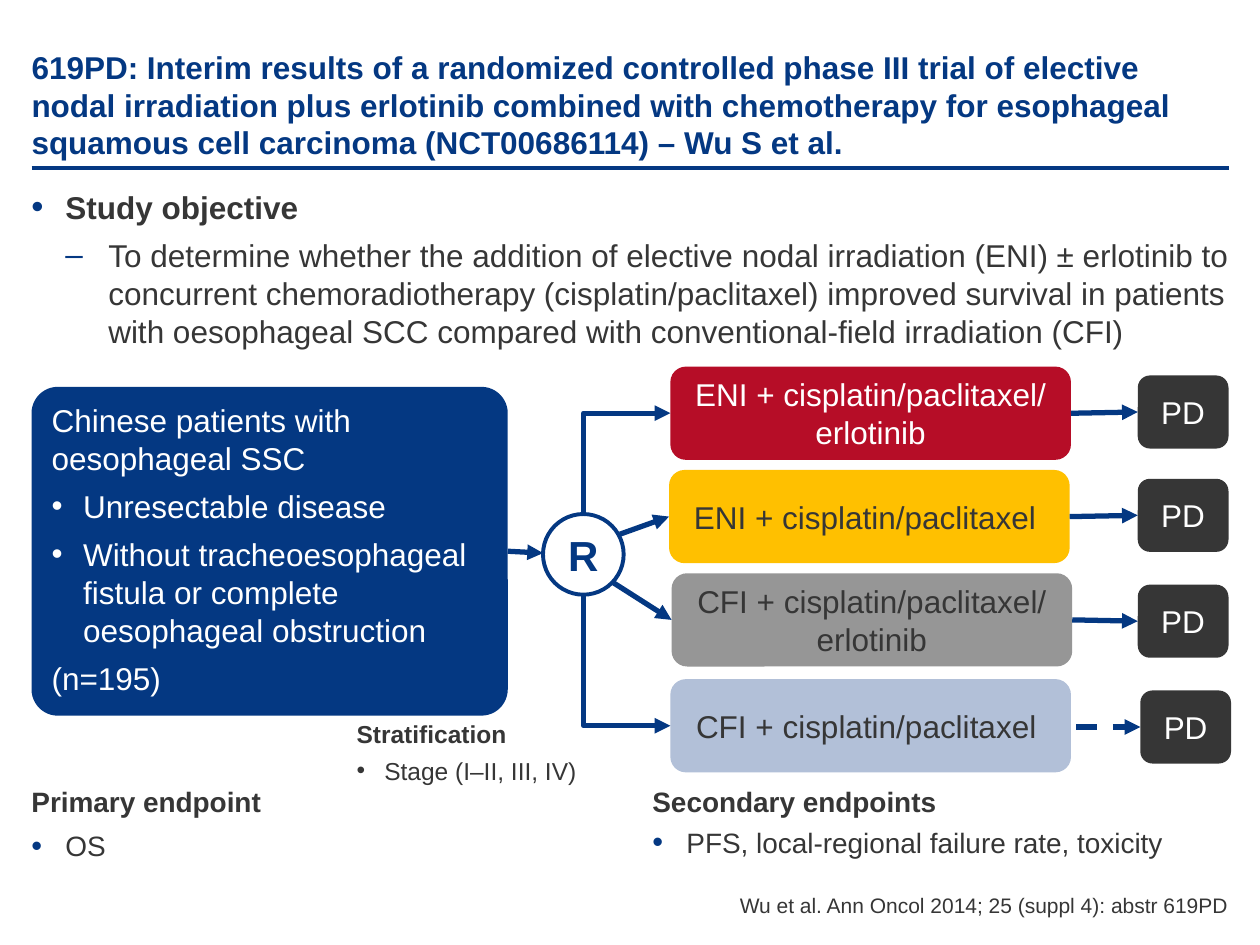
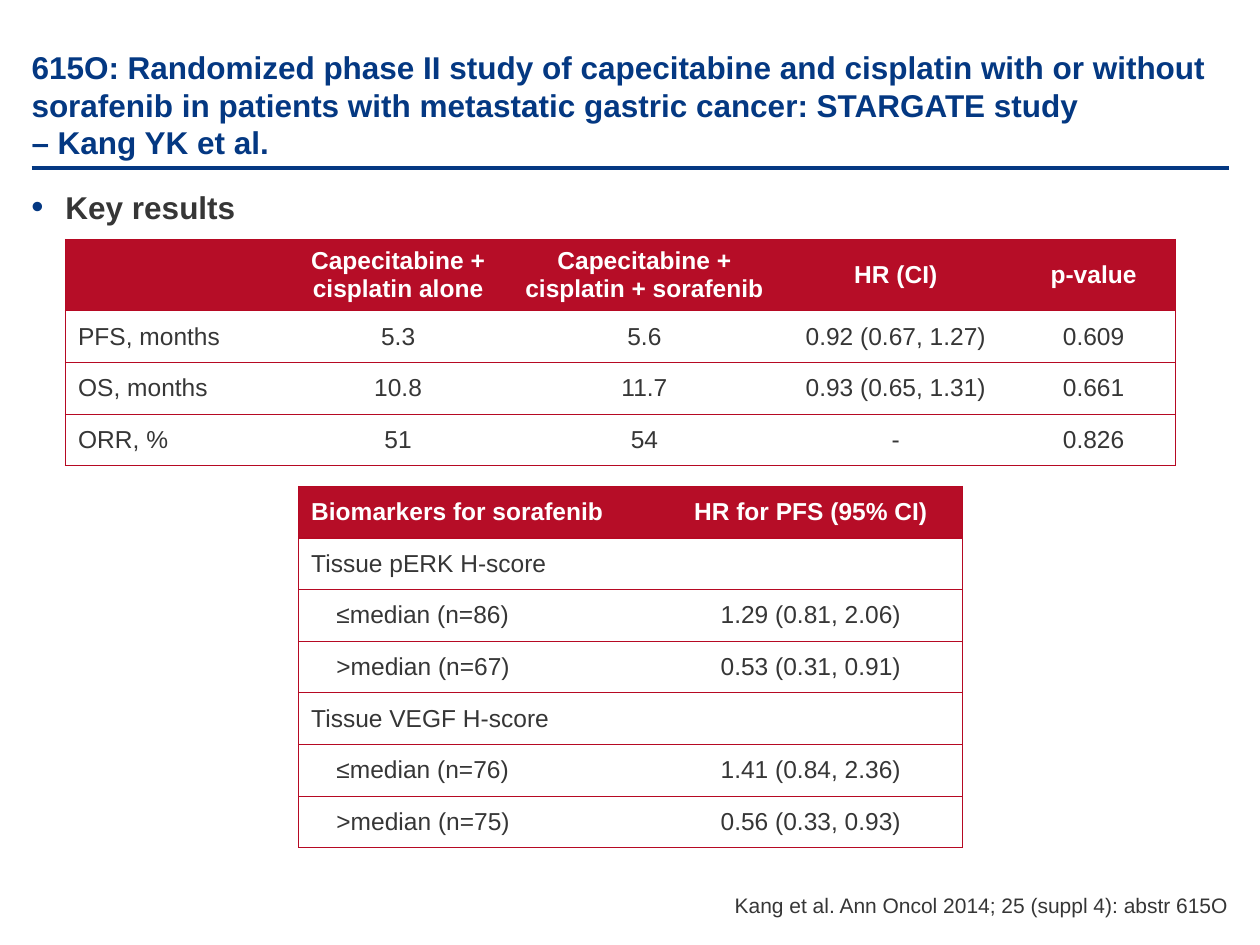
from copy import deepcopy

from lxml.etree import SubElement
from pptx import Presentation
from pptx.dml.color import RGBColor
from pptx.enum.dml import MSO_LINE
from pptx.enum.shapes import MSO_CONNECTOR as CONN, MSO_SHAPE as SHAPE
from pptx.enum.text import MSO_ANCHOR as ANCHOR, MSO_AUTO_SIZE, PP_ALIGN as ALIGN
from pptx.oxml.ns import qn
from pptx.util import Pt

PX = 9144  # 100 px to the inch
rgb = RGBColor.from_string
BLUE, DARK, WHITE = "043882", "363636", "FFFFFF"
RED, GOLD, GREY, PALE = "B60D27", "FFC000", "969696", "B2C0D8"
BORDER = "B60923"
NO_STYLE = "{2D5ABB26-0587-4C30-8999-92F81FD0307C}"


def write(tf, lines, size, color, align=ALIGN.LEFT, after=0, bullet_color=None,
          margins=None, anchor=None):
    """Fill tf with lines of (text, bold, bullet, left px, hanging px); the last three may be left out."""
    if anchor is not None:
        tf.vertical_anchor = anchor
    if margins:
        tf.word_wrap = True
        tf.margin_left, tf.margin_top, tf.margin_right, tf.margin_bottom = (m * PX for m in margins)
    for i, (text, bold, *indent) in enumerate(lines):
        p = tf.add_paragraph() if i else tf.paragraphs[0]
        p.text, p.alignment = text, align
        p.space_before, p.space_after = Pt(0), Pt(after)
        for r in p.runs:
            r.font.name, r.font.size, r.font.bold = "Arial", Pt(size), bold
            r.font.color.rgb = rgb(color)
        for br in p._p.findall(qn("a:br")):
            br.append(deepcopy(p.runs[0]._r.rPr))
        if indent:
            bullet, left, hanging = indent
            pPr = p._p.get_or_add_pPr()
            pPr.set("marL", str(left * PX))
            pPr.set("indent", str(-hanging * PX))
            if bullet and bullet_color:
                SubElement(SubElement(pPr, qn("a:buClr")), qn("a:srgbClr"), val=bullet_color)
                if bullet == "•":
                    SubElement(pPr, qn("a:buSzPct"), val="110000")
            if bullet:
                SubElement(pPr, qn("a:buFont"), typeface="Arial")
                SubElement(pPr, qn("a:buChar"), char=bullet)


def style_line(c, width=3, arrow=True, dash=None):
    c.line.color.rgb = rgb(BLUE)
    c.line.width = Pt(width)
    if dash:
        c.line.dash_style = dash
    spPr = c._element.spPr
    if arrow:
        SubElement(spPr.find(qn("a:ln")), qn("a:tailEnd"), type="triangle")
    SubElement(spPr, qn("a:effectLst"))


prs = Presentation()
prs.slide_width, prs.slide_height = 1000 * PX, 750 * PX

# Title, rule, body and citation of both slides
pages = [
    ("619PD: Interim results of a randomized controlled phase III trial of elective nodal "
     "irradiation plus erlotinib combined with chemotherapy for esophageal squamous cell "
     "carcinoma (NCT00686114) – Wu S et al.",
     [("Study objective", True, "•", 27, 27),
      ("To determine whether the addition of elective nodal irradiation (ENI) ± erlotinib to "
       "concurrent chemoradiotherapy (cisplatin/paclitaxel) improved survival in patients with "
       "oesophageal SCC compared with conventional-field irradiation (CFI)", False, "–", 61, 34)],
     "Wu et al. Ann Oncol 2014; 25 (suppl 4): abstr 619PD"),
    ("615O: Randomized phase II study of capecitabine and cisplatin with or without sorafenib in "
     "patients with metastatic gastric cancer: STARGATE study \v– Kang YK et al.",
     [("Key results", True, "•", 27, 27)],
     "Kang et al. Ann Oncol 2014; 25 (suppl 4): abstr 615O"),
]
slides = []
for title, body, citation in pages:
    s = prs.slides.add_slide(prs.slide_layouts[5])
    slides.append(s)
    sp = s.shapes.title
    sp.left, sp.top, sp.width, sp.height = (v * PX for v in (25, 25, 950, 103))
    sp.text_frame.auto_size = MSO_AUTO_SIZE.NONE
    write(sp.text_frame, [(title, True)], 18, BLUE, margins=(0, 5, 0, 0), anchor=ANCHOR.BOTTOM)
    rule = s.shapes.add_connector(CONN.STRAIGHT, 25 * PX, 133 * PX, 975 * PX, 133 * PX)
    style_line(rule, 2.25, arrow=False)
    sp = s.shapes.add_textbox(25 * PX, 144 * PX, 963 * PX, 140 * PX)
    write(sp.text_frame, body, 18, DARK, after=6, bullet_color=BLUE, margins=(0, 5, 0, 5))
    sp = s.shapes.add_textbox(525 * PX, 708 * PX, 450 * PX, 20 * PX)
    write(sp.text_frame, [(citation, False)], 12, DARK, ALIGN.RIGHT,
          margins=(0, 0, 0, 0), anchor=ANCHOR.BOTTOM)

# Slide 1: endpoints and stratification
trial, results = slides
notes = [
    ((25, 618, 467, 71), 16, 6, BLUE, 0,
     [("Primary endpoint", True), ("OS", False, "•", 27, 27)]),
    ((508, 618, 467, 71), 16, 4, BLUE, 10,
     [("Secondary endpoints", True),
      ("PFS, local-regional failure rate, toxicity", False, "•", 27, 27)]),
    ((283, 566, 220, 73), 14, 4, None, 0,
     [("Stratification", True), ("Stage (I–II, III, IV)", False, "•", 22, 22)]),
]
for box, size, after, bullet_color, side, lines in notes:
    sp = trial.shapes.add_textbox(*(v * PX for v in box))
    write(sp.text_frame, lines, size, DARK, after=after, bullet_color=bullet_color,
          margins=(side, 5, side, 5))

# Slide 1: patients and randomisation
patients = trial.shapes.add_shape(SHAPE.ROUNDED_RECTANGLE, 25 * PX, 307 * PX, 378 * PX, 261 * PX)
patients.adjustments[0] = 0.08
patients.shadow.inherit = False
patients.fill.solid()
patients.fill.fore_color.rgb = rgb(BLUE)
patients.line.fill.background()
write(patients.text_frame,
      [("Chinese patients with oesophageal SSC", False),
       ("Unresectable disease", False, "•", 25, 25),
       ("Without tracheoesophageal fistula or complete oesophageal obstruction", False, "•", 25, 25),
       ("(n=195)", False)],
      18, WHITE, after=6, margins=(10, 5, 10, 5), anchor=ANCHOR.TOP)

circle = trial.shapes.add_shape(SHAPE.OVAL, 431 * PX, 408 * PX, 64 * PX, 64 * PX)
circle.shadow.inherit = False
circle.fill.background()
circle.line.color.rgb = rgb(BLUE)
circle.line.width = Pt(2.25)
write(circle.text_frame, [("R", True)], 24, BLUE, ALIGN.CENTER, anchor=ANCHOR.MIDDLE)
circle.text_frame.word_wrap = False

c = trial.shapes.add_connector(CONN.STRAIGHT, 403 * PX, 439 * PX, 431 * PX, 439 * PX)
c.begin_connect(patients, 3)
c.end_x, c.end_y = 431 * PX, 439 * PX
style_line(c)

# Slide 1: treatment arms, each followed to progression
arms = [  # text, fill, text colour, arm left and top, PD left and top, arrow start on the circle
    ("ENI + cisplatin/paclitaxel/ erlotinib", RED, WHITE, (532, 291), (903, 298), (463, 408)),
    ("ENI + cisplatin/paclitaxel ", GOLD, DARK, (531, 373), (903, 380), (492, 424)),
    ("CFI + cisplatin/paclitaxel/\verlotinib", GREY, DARK, (533, 455), (903, 464), (486, 462)),
    ("CFI + cisplatin/paclitaxel ", PALE, DARK, (532, 539), (905, 548), (463, 471)),
]
for i, (text, fill, color, arm_at, pd_at, start) in enumerate(arms):
    boxes = []
    for label, (x, y), w, h, back, ink in ((text, arm_at, 318, 74, fill, color),
                                           ("PD", pd_at, 72, 58, DARK, WHITE)):
        sp = trial.shapes.add_shape(SHAPE.ROUNDED_RECTANGLE, x * PX, y * PX, w * PX, h * PX)
        sp.shadow.inherit = False
        sp.fill.solid()
        sp.fill.fore_color.rgb = rgb(back)
        sp.line.fill.background()
        write(sp.text_frame, [(label, False)], 18, ink, ALIGN.CENTER,
              margins=(10, 0, 10, 0), anchor=ANCHOR.MIDDLE)
        boxes.append(sp)
    arm, progression = boxes

    x, y = start[0] * PX, start[1] * PX
    end_x, end_y = arm.left, arm.top + arm.height // 2
    if i in (0, 3):  # elbow: vertical first, so the box is turned a quarter
        half_w, half_h = abs(end_y - y) // 2, (end_x - x) // 2
        mid_x, mid_y = (x + end_x) // 2, (y + end_y) // 2
        lift = half_h if i == 0 else -half_h
        c = trial.shapes.add_connector(CONN.ELBOW, mid_x + half_w, mid_y + lift,
                                       mid_x - half_w, mid_y - lift)
        spPr = c._element.spPr
        spPr.find(qn("a:xfrm")).set("rot", "5400000" if i == 0 else "16200000")
        spPr.find(qn("a:prstGeom")).set("prst", "bentConnector2")
    else:
        c = trial.shapes.add_connector(CONN.STRAIGHT, x, y, end_x, end_y)
        c.end_connect(arm, 1)
    style_line(c)

    last = i == 3
    c = trial.shapes.add_connector(CONN.STRAIGHT, 854 * PX, 577 * PX, 905 * PX, 577 * PX)
    if not last:
        c.begin_connect(arm, 3)
    c.end_connect(progression, 1)
    style_line(c, dash=MSO_LINE.DASH if last else None)

# Slide 2: efficacy and biomarker tables
tables = [
    (52, 190, [176, 176, 215, 184, 130], 56,
     [("", "Capecitabine + cisplatin alone", "Capecitabine + cisplatin + sorafenib",
       "HR (CI)", "p-value"),
      ("PFS, months", "5.3", "5.6", "0.92 (0.67, 1.27)", "0.609"),
      ("OS, months", "10.8", "11.7", "0.93 (0.65, 1.31)", "0.661"),
      ("ORR, %", "51", "54", "-", "0.826")]),
    (237, 386, [286, 241], 41,
     [("Biomarkers for sorafenib", "HR for PFS (95% CI)"),
      ("Tissue pERK H-score", ""),
      ("≤median (n=86)", "1.29 (0.81, 2.06)"),
      (">median (n=67)", "0.53 (0.31, 0.91)"),
      ("Tissue VEGF H-score", ""),
      ("≤median (n=76)", "1.41 (0.84, 2.36)"),
      (">median (n=75)", "0.56 (0.33, 0.93)")]),
]
for left, top, widths, header_height, rows in tables:
    heights = [header_height] + [41] * (len(rows) - 1)
    table = results.shapes.add_table(len(rows), len(widths), left * PX, top * PX,
                                     sum(widths) * PX, sum(heights) * PX).table
    table._tbl.tblPr.find(qn("a:tableStyleId")).text = NO_STYLE
    for column, width in zip(table.columns, widths):
        column.width = width * PX
    for i, row in enumerate(rows):
        table.rows[i].height = heights[i] * PX
        for j, text in enumerate(row):
            cell = table.cell(i, j)
            cell.vertical_anchor = ANCHOR.MIDDLE
            sides = ["a:lnL"] * (j == 0) + ["a:lnR"] * (j == len(row) - 1) + ["a:lnT", "a:lnB"]
            for side in sides:
                ln = SubElement(cell._tc.get_or_add_tcPr(), qn(side), w=str(Pt(0.75)))
                SubElement(SubElement(ln, qn("a:solidFill")), qn("a:srgbClr"), val=BORDER)
            if i == 0:
                cell.fill.solid()
                cell.fill.fore_color.rgb = rgb(RED)
            else:
                cell.fill.background()
            indent = (None, 20, 0) if "median" in text else ()
            write(cell.text_frame, [(text, i == 0, *indent)], 14, DARK if i else WHITE,
                  ALIGN.CENTER if j else ALIGN.LEFT)

prs.save("out.pptx")
